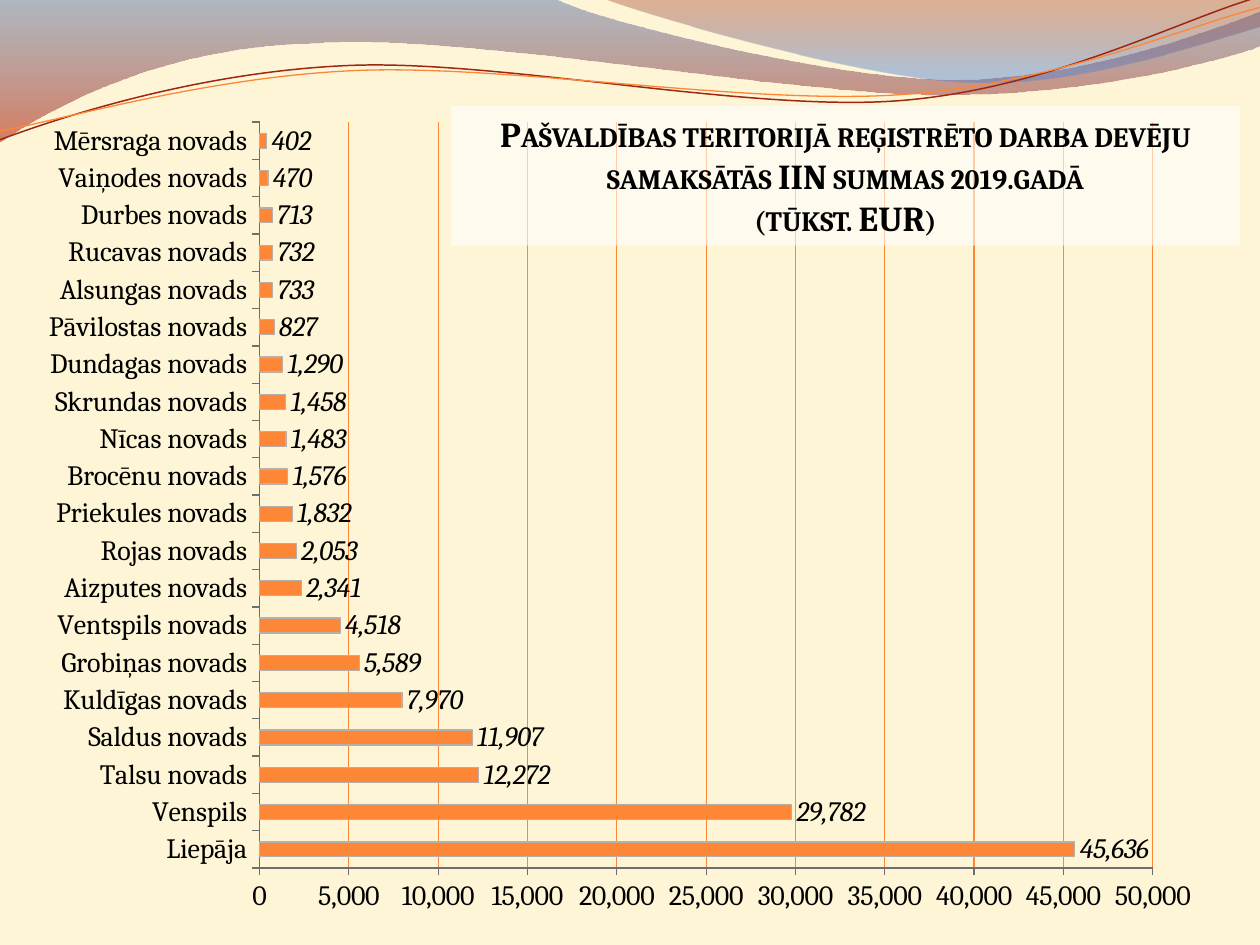
from math import cos, radians, sin

from lxml import etree
from pptx import Presentation
from pptx.chart.data import CategoryChartData
from pptx.dml.color import RGBColor
from pptx.enum.chart import XL_CHART_TYPE, XL_LABEL_POSITION, XL_TICK_MARK
from pptx.enum.text import MSO_ANCHOR, MSO_AUTO_SIZE, PP_ALIGN
from pptx.oxml.ns import qn
from pptx.util import Inches, Pt

BAR = XL_CHART_TYPE.BAR_CLUSTERED
OUTSIDE_END = XL_LABEL_POSITION.OUTSIDE_END
TICK_OUT, TICK_NONE = XL_TICK_MARK.OUTSIDE, XL_TICK_MARK.NONE
TOP, CENTER, NO_AUTOSIZE = MSO_ANCHOR.TOP, PP_ALIGN.CENTER, MSO_AUTO_SIZE.NONE
TITLE_ONLY = 5
COLUMNS, ROWS = 10, 7.5
TILT = -2.7

TITLE_LINES = [
    "Pašvaldības teritorijā reģistrēto darba devēju samaksātās IIN summas 2019.gadā",
    "(tūkst. EUR)",
]
PAYMENTS = {
    "Liepāja": 45636, "Venspils": 29782, "Talsu novads": 12272,
    "Saldus novads": 11907, "Kuldīgas novads": 7970, "Grobiņas novads": 5589,
    "Ventspils novads": 4518, "Aizputes novads": 2341, "Rojas novads": 2053,
    "Priekules novads": 1832, "Brocēnu novads": 1576, "Nīcas novads": 1483,
    "Skrundas novads": 1458, "Dundagas novads": 1290, "Pāvilostas novads": 827,
    "Alsungas novads": 733, "Rucavas novads": 732, "Durbes novads": 713,
    "Vaiņodes novads": 470, "Mērsraga novads": 402,
}

# Wave outlines: a pair is a straight step, six numbers are a Bézier step
WIDE_WAVE = [
    (0, 0), (4.4, -0.01), (4.76, 0.17, 6.64, 0.63, 7.58, 0.63),
    (8.53, 0.63, 9.58, 0.26, 10, 0.09), (10.01, 0.36),
    (9.83, 0.44, 8.7, 0.76, 7.46, 0.75), (6.22, 0.75, 3.82, 0.28, 2.57, 0.34),
    (1.29, 0.36, 0.46, 0.83, -0.01, 1.13), (0, 0),
]
RIGHT_WAVE = [
    (4.79, -0.01), (5.09, 0.11, 6.82, 0.62, 7.69, 0.65),
    (8.56, 0.69, 9.61, 0.32, 10, 0.21), (10, 0), (4.79, -0.01),
]
RED_LINE = [
    (0, 1.11), (0.48, 0.93, 1.58, 0.57, 2.77, 0.52),
    (3.95, 0.47, 5.93, 0.89, 7.13, 0.8), (8.33, 0.71, 9.38, 0.15, 9.98, -0.02),
]
ORANGE_LINE = [
    (0, 1.04), (0.47, 0.96, 1.64, 0.61, 2.83, 0.56),
    (4.03, 0.51, 5.97, 0.84, 7.17, 0.75), (8.36, 0.67, 9.41, 0.21, 10, 0.06),
]


def color(value):
    return RGBColor.from_string(value)


def set_values(target, values):
    for name, value in values.items():
        setattr(target, name, value)


def set_opacity(fill_element, percents):
    """Give each colour inside a fill its opacity, in order."""
    for node, percent in zip(fill_element.iter(qn("a:srgbClr")), percents):
        etree.SubElement(node, qn("a:alpha")).set("val", str(percent * 1000))


def turn(points, center, degrees):
    angle = radians(degrees)
    turned = []
    for x, y in points:
        dx, dy = x - center[0], y - center[1]
        turned.append((center[0] + dx * cos(angle) - dy * sin(angle),
                       center[1] + dx * sin(angle) + dy * cos(angle)))
    return turned


class SlideBuilder:
    font = "Cambria"
    ink, accent, paper, axis_gray = "000000", "FE8637", "FDF5D5", "6E6E6E"

    def __init__(self, deck):
        self.column = deck.slide_width / COLUMNS
        self.row = deck.slide_height / ROWS
        self.slide = deck.slides.add_slide(deck.slide_layouts[TITLE_ONLY])
        background = self.slide.background.fill
        background.solid()
        background.fore_color.rgb = color(self.paper)

    def frame(self, left, top, width, height):
        return dict(left=round(left * self.column), top=round(top * self.row),
                    width=round(width * self.column), height=round(height * self.row))

    def style_font(self, font, size, **extra):
        set_values(font, dict(name=self.font, size=Pt(size), **extra))
        font.color.rgb = color(self.ink)

    def style_line(self, line, value, width):
        line.color.rgb = color(value)
        line.width = Pt(width)

    def outline(self, steps, closed, tilt=0):
        points = [(step[i] * self.column, step[i + 1] * self.row)
                  for step in steps for i in range(0, len(step), 2)]
        center = [(points[0][axis] + points[-1][axis]) / 2 for axis in (0, 1)]
        points = turn(points, center, -tilt)
        builder = self.slide.shapes.build_freeform(*points[0])
        builder.add_line_segments(points[1:], close=closed)
        shape = builder.convert_to_shape()
        shape.shadow.inherit = False
        shape.rotation = tilt
        # Join the three points of each Bézier step into one curve
        segments = iter(list(shape.element.iter(qn("a:lnTo"))))
        for step in steps[1:]:
            segment = next(segments)
            if len(step) == 6:
                curve = etree.Element(qn("a:cubicBezTo"))
                segment.addprevious(curve)
                for part in (segment, next(segments), next(segments)):
                    curve.append(part[0])
                    part.getparent().remove(part)
        return shape

    def wave(self, steps, stops):
        shape = self.outline(steps, True)
        shape.line.fill.background()
        shape.fill.gradient()
        shape.fill.gradient_angle = 270
        for stop, (position, value, _) in zip(shape.fill.gradient_stops, stops):
            stop.position = position
            stop.color.rgb = color(value)
        gradient = shape.element.spPr.find(qn("a:gradFill"))
        set_opacity(gradient, [opacity for _, _, opacity in stops])

    def curve(self, steps, value, width):
        shape = self.outline(steps, False, TILT)
        shape.fill.background()
        self.style_line(shape.line, value, width)

    def bar_chart(self, values, area, plot_area):
        data = CategoryChartData(number_format="#,##0")
        data.categories = list(values)
        data.add_series("Series 1", list(values.values()))
        box = self.frame(*area)
        chart = self.slide.shapes.add_chart(
            BAR, box["left"], box["top"], box["width"], box["height"], data).chart
        set_values(chart, dict(has_legend=False, has_title=False))
        self.style_font(chart.font, 18)

        # Bars and their labels
        plot = chart.plots[0]
        set_values(plot, dict(gap_width=150, vary_by_categories=False, has_data_labels=True))
        bars = plot.series[0].format
        bars.fill.solid()
        bars.fill.fore_color.rgb = color(self.accent)
        self.style_line(bars.line, "B8B0A8", 0.75)
        set_values(plot.data_labels, dict(
            show_value=True, position=OUTSIDE_END, number_format="#,##0",
            number_format_is_linked=False))
        self.style_font(plot.data_labels.font, 16, italic=True)

        # Axes and gridlines
        for axis in (chart.category_axis, chart.value_axis):
            set_values(axis, dict(major_tick_mark=TICK_OUT, minor_tick_mark=TICK_NONE))
            self.style_font(axis.tick_labels.font, 16)
            self.style_line(axis.format.line, self.axis_gray, 0.75)
        scale = chart.value_axis
        set_values(scale, dict(minimum_scale=0, maximum_scale=50000, major_unit=5000,
                               has_major_gridlines=True))
        set_values(scale.tick_labels, dict(number_format="#,##0", number_format_is_linked=False))
        self.style_line(scale.major_gridlines.format.line, self.accent, 0.75)
        left, top, width, height = area
        x, y, w, h = plot_area
        self.place_plot(chart, ((x - left) / width, (y - top) / height, w / width, h / height))

    def place_plot(self, chart, shares):
        area = chart.element.find(".//" + qn("c:plotArea"))
        for old in area.findall(qn("c:layout")):
            area.remove(old)
        layout = etree.Element(qn("c:layout"))
        area.insert(0, layout)
        manual = etree.SubElement(layout, qn("c:manualLayout"))
        settings = [("layoutTarget", "inner"), ("xMode", "edge"), ("yMode", "edge")]
        for name, value in settings + list(zip("xywh", shares)):
            etree.SubElement(manual, qn("c:" + name)).set("val", str(value))

    def title(self, lines, area):
        box = self.slide.shapes.title
        box.element.getparent().append(box.element)  # in front of the chart
        set_values(box, self.frame(*area))
        box.fill.solid()
        box.fill.fore_color.rgb = color("FFFFFF")
        set_opacity(box.element.spPr.find(qn("a:solidFill")), [58])
        text = box.text_frame
        set_values(text, dict(word_wrap=True, auto_size=NO_AUTOSIZE, vertical_anchor=TOP))
        para = text.paragraphs[0]
        para.alignment = CENTER
        for index, line in enumerate(lines):
            if index:
                para.add_line_break()
            span = para.add_run()
            span.text = line
            self.style_font(span.font, 20, bold=True)
            span.font._element.set("cap", "small")


def main():
    deck = Presentation()
    set_values(deck, dict(slide_width=Inches(10), slide_height=Inches(7.5)))
    page = SlideBuilder(deck)
    # Waves along the top
    page.wave(WIDE_WAVE, [(0, "4F6EA8", 45), (1, "B61A00", 55)])
    page.wave(RIGHT_WAVE, [(0, "951500", 30), (0.8, "5681D1", 45)])
    page.curve(RED_LINE, "9E2713", 0.85)
    page.curve(ORANGE_LINE, page.accent, 0.75)
    # Chart and heading
    page.bar_chart(PAYMENTS, (0.2, 0.83, 9.45, 6.54), (2.06, 0.97, 7.09, 5.92))
    page.title(TITLE_LINES, (3.58, 0.84, 6.26, 1.11))
    deck.save("out.pptx")


if __name__ == "__main__":
    main()
